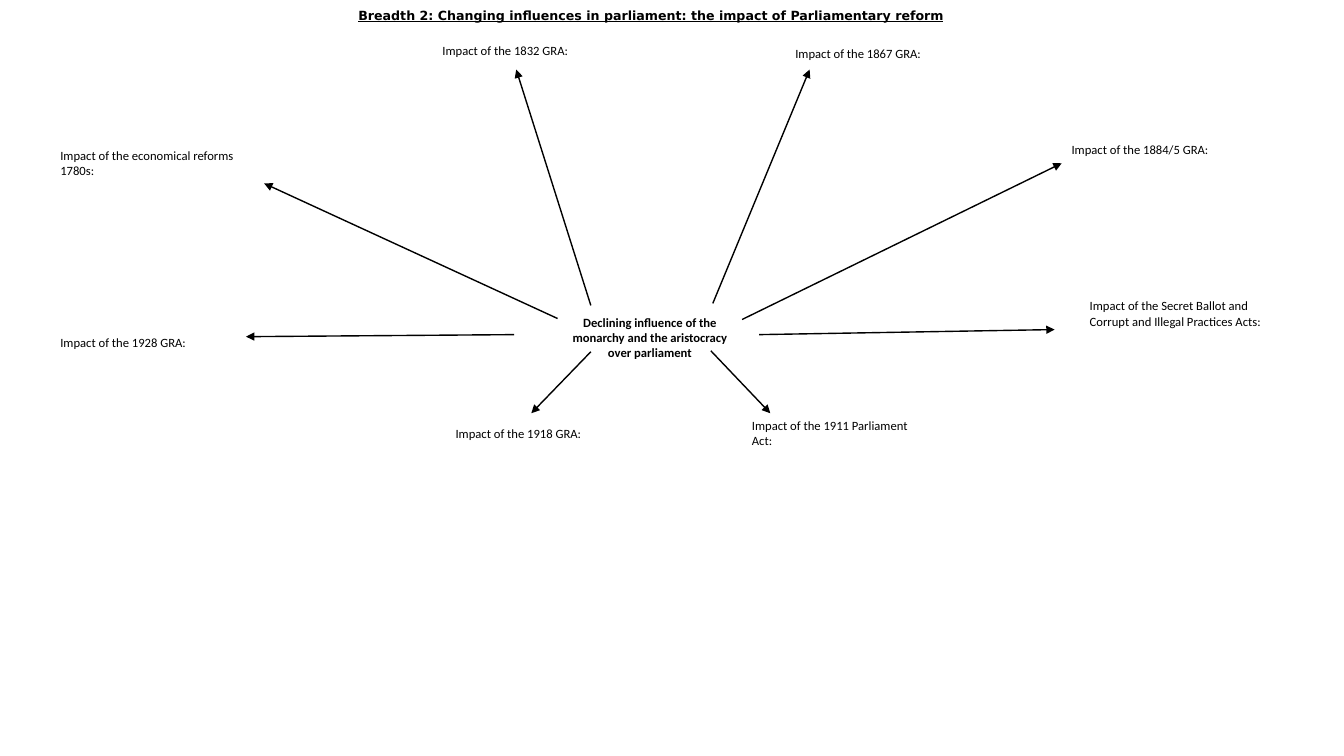
from dataclasses import dataclass

from lxml.etree import SubElement
from pptx import Presentation
from pptx.dml.color import RGBColor
from pptx.enum.shapes import MSO_CONNECTOR
from pptx.enum.text import MSO_ANCHOR, MSO_AUTO_SIZE, PP_ALIGN
from pptx.oxml.ns import qn
from pptx.util import Inches, Pt


@dataclass(frozen=True)
class Theme:
    ink: RGBColor = RGBColor(0, 0, 0)
    paper: RGBColor = RGBColor(255, 255, 255)
    title_font: str = "DejaVu Sans"
    body_font: str = "Calibri"
    text_size: Pt = Pt(9)
    line_width: Pt = Pt(1)


class MindMap:
    def __init__(self, page, theme):
        self.page = page
        self.theme = theme
        page.background.fill.solid()
        page.background.fill.fore_color.rgb = theme.paper

    def set_text(self, box, text, font_name, align, bold=False, underline=None):
        frame = box.text_frame
        frame.text = text
        frame.word_wrap = True
        frame.auto_size = MSO_AUTO_SIZE.NONE
        frame.vertical_anchor = MSO_ANCHOR.TOP
        paragraph = frame.paragraphs[0]
        paragraph.alignment = align
        font = paragraph.font
        font.name = font_name
        font.size = self.theme.text_size
        font.color.rgb = self.theme.ink
        font.bold = bold
        font.underline = underline

    def title(self, text, left, top, width, height):
        box = self.page.shapes.title
        box.left, box.top = Inches(left), Inches(top)
        box.width, box.height = Inches(width), Inches(height)
        self.set_text(box, text, self.theme.title_font, PP_ALIGN.CENTER, True, True)

    def label(self, text, left, top, width, height, align=PP_ALIGN.LEFT, bold=False):
        box = self.page.shapes.add_textbox(
            Inches(left), Inches(top), Inches(width), Inches(height))
        self.set_text(box, text, self.theme.body_font, align, bold)

    def arrow(self, start, end):
        points = [Inches(value) for value in (*start, *end)]
        connector = self.page.shapes.add_connector(MSO_CONNECTOR.STRAIGHT, *points)
        connector.line.color.rgb = self.theme.ink
        connector.line.width = self.theme.line_width
        properties = connector.element.spPr
        SubElement(properties.find(qn("a:ln")), qn("a:tailEnd"), type="triangle")
        SubElement(properties, qn("a:effectLst"))


LABEL_WIDTH = 1.94
ONE_LINE, TWO_LINES = 0.25, 0.4

IMPACTS = [
    ("Impact of the economical reforms 1780s:", 0.5, 1.42, TWO_LINES, (5.53, 3.16), (2.62, 1.82)),
    ("Impact of the 1832 GRA:", 4.29, 0.38, ONE_LINE, (5.86, 3.03), (5.12, 0.69)),
    ("Impact of the 1867 GRA:", 7.79, 0.41, ONE_LINE, (7.07, 3.01), (8.03, 0.69)),
    ("Impact of the 1884/5 GRA:", 10.53, 1.36, ONE_LINE, (7.36, 3.17), (10.53, 1.62)),
    ("Impact of the Secret Ballot and Corrupt and Illegal Practices Acts:",
     10.71, 2.91, TWO_LINES, (7.53, 3.32), (10.46, 3.27)),
    ("Impact of the 1918 GRA:", 4.42, 4.18, ONE_LINE, (5.86, 3.49), (5.27, 4.1)),
    ("Impact of the 1928 GRA:", 0.5, 3.27, ONE_LINE, (5.1, 3.32), (2.44, 3.34)),
    ("Impact of the 1911 Parliament Act:", 7.36, 4.1, TWO_LINES, (7.05, 3.48), (7.64, 4.1)),
]


def main():
    deck = Presentation()
    deck.slide_width, deck.slide_height = Inches(13.33), Inches(7.5)
    title_only = deck.slide_layouts.get_by_name("Title Only")
    mind_map = MindMap(deck.slides.add_slide(title_only), Theme())
    mind_map.title(
        "Breadth 2: Changing influences in parliament: the impact of Parliamentary reform",
        0.58, 0.03, 11.75, 0.25)
    mind_map.label(
        "Declining influence of the monarchy and the aristocracy over parliament",
        5.54, 3.07, 1.81, 0.56, PP_ALIGN.CENTER, True)
    for text, left, top, height, start, end in IMPACTS:
        mind_map.label(text, left, top, LABEL_WIDTH, height)
        mind_map.arrow(start, end)
    deck.save("out.pptx")


if __name__ == "__main__":
    main()
